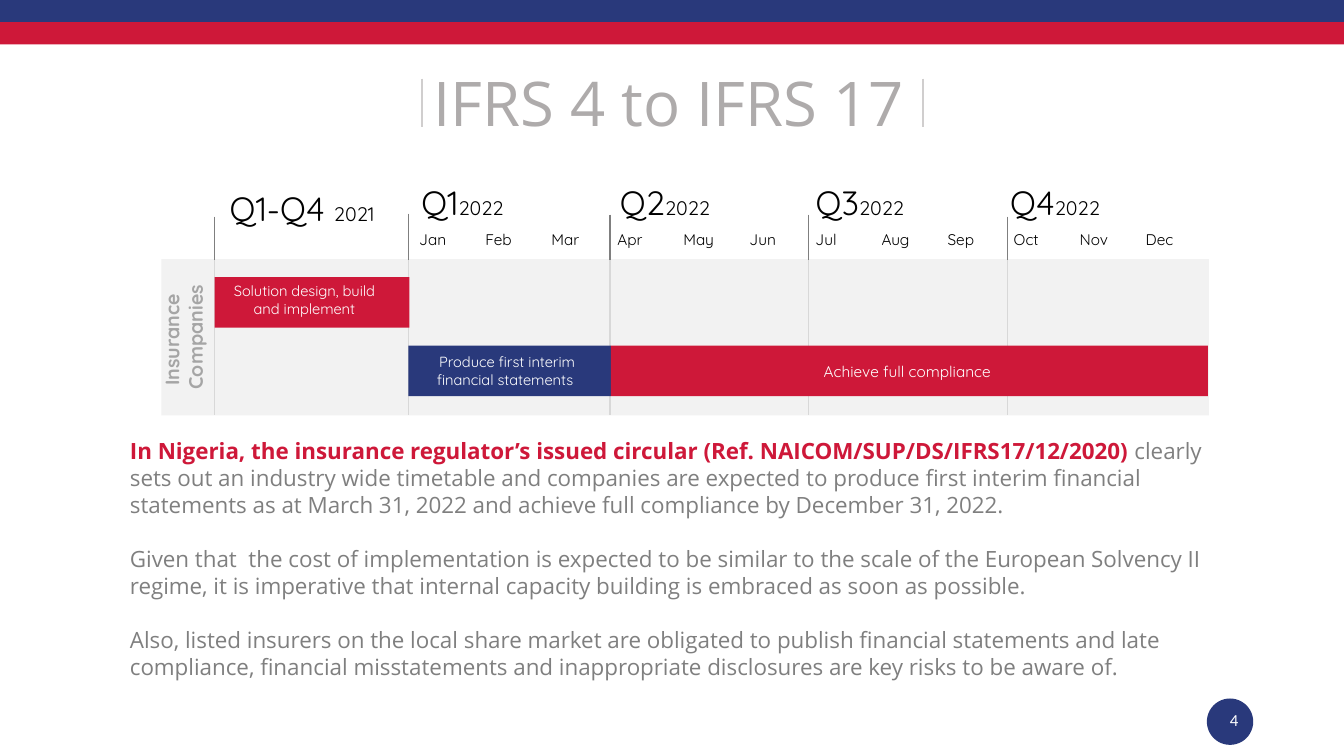
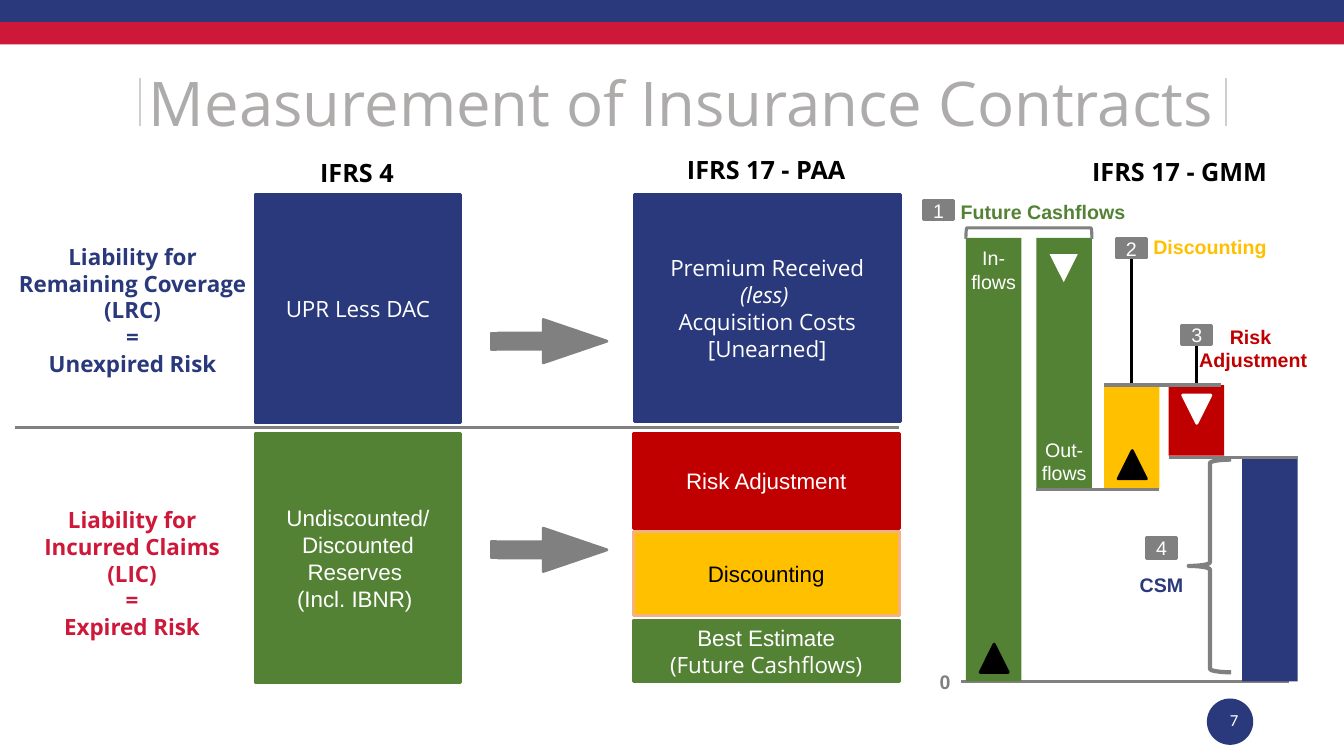
from dataclasses import dataclass, field
from typing import Optional

from lxml import etree
from pptx import Presentation
from pptx.dml.color import RGBColor
from pptx.enum.shapes import MSO_CONNECTOR, MSO_SHAPE as Geo
from pptx.enum.text import MSO_ANCHOR as Anchor, MSO_AUTO_SIZE as Fit, PP_ALIGN as Al
from pptx.oxml.ns import qn
from pptx.util import Inches, Pt


@dataclass(frozen=True)
class Theme:
    navy: str = "29397B"
    red: str = "CE1839"
    green: str = "548235"
    amber: str = "FFC000"
    peach: str = "F4B183"
    crimson: str = "C00000"
    gray: str = "808080"
    body: str = "7F7F7F"
    title: str = "AEABAB"
    rule: str = "D0CECE"
    grid: str = "D8D8D8"
    panel: str = "F2F2F2"
    side: str = "A5A5A5"
    black: str = "000000"
    white: str = "FFFFFF"
    sans: str = "Open Sans"
    round: str = "Quicksand"
    plain: str = "Arial"
    number: str = "Calibri"
    title_size: float = 44
    quarter_size: float = 24
    head_size: float = 18
    text_size: float = 16
    label_size: float = 14
    number_size: float = 12
    month_size: float = 11
    bar_size: float = 10.5


T = Theme()
INSET = (0.1, 0.05, 0.1, 0.05)
TIGHT = (0.04, 0.08, 0.04, 0.04)
NONE = (0, 0, 0, 0)


@dataclass(frozen=True)
class Text:
    paras: tuple
    font: str = T.sans
    size: float = T.text_size
    color: str = T.black
    bold: bool = False
    align: Al = Al.CENTER
    anchor: Anchor = Anchor.TOP
    inset: tuple = INSET
    wrap: bool = True
    gap: float = 0


@dataclass(frozen=True)
class Block:
    at: tuple
    fill: Optional[str] = None
    line: Optional[str] = None
    geo: Geo = Geo.RECTANGLE
    text: Optional[Text] = None
    width: float = 2
    rot: float = 0
    adj: tuple = ()


@dataclass(frozen=True)
class Rule:
    start: tuple
    end: tuple
    color: str = T.gray
    width: float = 2.25


@dataclass(frozen=True)
class Period:
    name: str
    year: str
    line_x: float
    text_x: float
    text_y: float = 1.76
    tick_y: float = 2.13
    months: tuple = field(default=())


def color(hex_code: str) -> RGBColor:
    return RGBColor.from_string(hex_code)


def write(tf, text: Text) -> None:
    sides = ("margin_left", "margin_top", "margin_right", "margin_bottom")
    frame = dict(zip(sides, map(Inches, text.inset)))
    frame |= {"word_wrap": text.wrap, "vertical_anchor": text.anchor}
    for name, value in frame.items():
        setattr(tf, name, value)
    for i, para in enumerate(text.paras):
        p = tf.add_paragraph() if i else tf.paragraphs[0]
        p.alignment = text.align
        if i and text.gap:
            p.space_before = Pt(text.gap)
        runs = ((para, {}),) if isinstance(para, str) else para
        for words, changes in runs:
            r = p.add_run()
            r.text = words
            fmt = {"name": text.font, "size": text.size, "bold": text.bold,
                   "color": text.color} | changes
            r.font.color.rgb = color(fmt.pop("color"))
            fmt["size"] = Pt(fmt["size"])
            for name, value in fmt.items():
                setattr(r.font, name, value)


def add_text(s, at: tuple, text: Text, rot: float = 0, grow: bool = True) -> None:
    sp = s.shapes.add_textbox(*map(Inches, at))
    sp.rotation = rot
    write(sp.text_frame, text)
    if grow:
        sp.text_frame.auto_size = Fit.SHAPE_TO_FIT_TEXT


def add_block(s, b: Block) -> None:
    sp = s.shapes.add_shape(b.geo, *map(Inches, b.at))
    sp.shadow.inherit = False
    sp.rotation = b.rot
    for i, value in enumerate(b.adj):
        sp.adjustments[i] = value
    for part, hex_code in ((sp.fill, b.fill), (sp.line.fill, b.line)):
        if hex_code:
            part.solid()
            part.fore_color.rgb = color(hex_code)
        else:
            part.background()
    if b.line:
        sp.line.width = Pt(b.width)
    if b.text:
        write(sp.text_frame, b.text)


def add_rule(s, rule: Rule) -> None:
    ends = map(Inches, rule.start + rule.end)
    ln = s.shapes.add_connector(MSO_CONNECTOR.STRAIGHT, *ends)
    ln.line.color.rgb = color(rule.color)
    ln.line.width = Pt(rule.width)
    etree.SubElement(ln._element.spPr, qn("a:effectLst"))


def add_frame(prs, title: str, at: tuple, rule_xs: tuple, rule_y: float, number: str):
    s = prs.slides.add_slide(prs.slide_layouts[6])
    add_block(s, Block((11.97, 6.93, 0.46, 0.46), T.navy, geo=Geo.OVAL))
    for i, fill in enumerate((T.navy, T.red)):
        add_block(s, Block((0, 0.22 * i, 13.33, 0.22), fill))
    add_text(s, at, Text((title,), size=T.title_size, color=T.title))
    for x in rule_xs:
        add_rule(s, Rule((x, rule_y), (x, rule_y + 0.48), T.rule, 1.5))
    add_text(s, (11.92, 6.94, 0.46, 0.4),
             Text((number,), T.number, T.number_size, T.white,
                  align=Al.RIGHT, anchor=Anchor.MIDDLE), grow=False)
    return s


PERIODS = (
    Period("Q1-Q4 ", "2021", 2.13, 2.18, 1.82, 2.15),
    Period("Q1", "2022", 4.05, 4.08, tick_y=2.12, months=("Jan", "Feb", "Mar")),
    Period("Q2", "2022", 6.05, 6.05, months=("Apr", "May", "Jun")),
    Period("Q3", "2022", 8.02, 7.99, months=("Jul", "Aug", "Sep")),
    Period("Q4", "2022", 9.99, 9.92, tick_y=2.15, months=("Oct", "Nov", "Dec")),
)


def add_timeline(s) -> None:
    add_block(s, Block((1.6, 2.57, 10.39, 1.55), T.panel))
    for q in PERIODS:
        add_rule(s, Rule((q.line_x, 2.57), (q.line_x, 4.12), T.grid, 0.75))
        add_rule(s, Rule((q.line_x, q.tick_y), (q.line_x, 2.58), T.body, 0.75))
        label = ((q.name, {}), (q.year, {"size": T.label_size}))
        add_text(s, (q.text_x, q.text_y, 1.91, 0.5),
                 Text((label,), T.round, T.quarter_size, align=Al.LEFT))
    months = [month for q in PERIODS for month in q.months]
    for i, month in enumerate(months):
        add_text(s, (4.06 + 0.655 * i, 2.23, 0.64, 0.29),
                 Text((month,), T.round, T.month_size, align=Al.LEFT))
    add_text(s, (1.05, 3.06, 1.54, 0.57),
             Text(("Insurance ", "Companies"), T.round, T.label_size, T.side, True), 270)
    bars = (
        ((2.13, 2.75, 1.93, 0.5), T.red, "Solution design, build and implement",
         T.bar_size, Anchor.TOP, (0.11, 0.05, 0.26, 0.05)),
        ((4.05, 3.43, 2.01, 0.5), T.navy, "Produce first interim financial statements ",
         T.bar_size, Anchor.MIDDLE, (0.2, 0.05, 0.25, 0.05)),
        ((6.06, 3.43, 5.92, 0.5), T.red, "Achieve full compliance ",
         T.month_size, Anchor.MIDDLE, INSET),
    )
    for at, fill, words, size, anchor, inset in bars:
        add_block(s, Block(at, fill, text=Text(
            (words,), T.round, size, T.white, anchor=anchor, inset=inset)))


def timetable_slide(prs) -> None:
    s = add_frame(prs, "IFRS 4 to IFRS 17", (2.14, 0.6, 8.99, 0.84), (4.19, 9.15), 0.78, "4")
    add_timeline(s)
    circular = (
        ("In Nigeria, the insurance regulator’s issued circular "
         "(Ref. NAICOM/SUP/DS/IFRS17/12/2020) ", {"color": T.red, "bold": True}),
        ("clearly sets out an industry wide timetable and companies are expected to "
         "produce first interim financial statements as at March 31, 2022 and achieve "
         "full compliance by December 31, 2022.", {}),
    )
    cost = ("Given that  the cost of implementation is expected to be similar to the scale "
            "of the European Solvency II regime, it is imperative that internal capacity "
            "building is embraced as soon as possible.")
    listed = ("Also, listed insurers on the local share market are obligated to publish "
              "financial statements and late compliance, financial misstatements and "
              "inappropriate disclosures are key risks to be aware of.")
    add_text(s, (1.19, 4.29, 11.2, 2.52),
             Text((circular, cost, listed), color=T.body, align=Al.LEFT, gap=19.3))


def add_comparison(s) -> None:
    add_rule(s, Rule((0.15, 4.24), (8.92, 4.24)))
    for x, y, words in ((2.52, 1.51, "IFRS 4"), (6.58, 1.48, "IFRS 17 - PAA"),
                        (10.68, 1.5, "IFRS 17 - GMM")):
        add_text(s, (x, y, 2.04, 0.4), Text((words,), size=T.head_size, bold=True))
    liabilities = (
        ((0.06, 2.36, 2.51, 1.45), T.navy,
         ("Liability for Remaining Coverage", "(LRC)", "=", "Unexpired Risk")),
        ((0.2, 4.97, 2.22, 1.45), T.red,
         ("Liability for Incurred Claims", "(LIC)", "=", "Expired Risk")),
    )
    for at, hue, paras in liabilities:
        add_text(s, at, Text(paras, color=hue, bold=True))
    boxes = (
        ((2.53, 1.93, 2.04, 2.26), T.navy, T.navy, T.sans, T.white, ("UPR Less DAC",)),
        ((2.53, 4.3, 2.04, 2.47), T.green, T.green, T.plain, T.white,
         ("Undiscounted/ Discounted Reserves ", "(Incl. IBNR) ")),
        ((6.29, 1.93, 2.64, 2.25), T.navy, T.navy, T.sans, T.white,
         ("Premium Received", (("(less) ", {"italic": True}),),
          "Acquisition Costs", "[Unearned]")),
        ((6.28, 6.15, 2.64, 0.61), T.green, T.green, T.plain, T.white,
         ("Best Estimate", (("(Future Cashflows)", {"name": T.sans}),))),
        ((6.28, 5.27, 2.64, 0.84), T.amber, T.peach, T.plain, T.black, ("Discounting",)),
        ((6.28, 4.3, 2.64, 0.94), T.crimson, T.crimson, T.plain, T.white,
         ("Risk Adjustment",)),
    )
    for at, fill, line, font, hue, paras in boxes:
        add_block(s, Block(at, fill, line, text=Text(
            paras, font, color=hue, anchor=Anchor.MIDDLE)))
    for y in (3.17, 5.24):
        add_block(s, Block((4.87, y, 1.15, 0.43), T.gray, T.gray,
                           Geo.STRIPED_RIGHT_ARROW, adj=(0.375, 1.469)))


def add_waterfall(s) -> None:
    add_rule(s, Rule((9.53, 6.76), (12.78, 6.76)))
    bars = (
        (9.58, 2.36, 4.4, T.green, "In-flows", Anchor.TOP),
        (10.28, 2.36, 2.49, T.green, "Out-flows", Anchor.BOTTOM),
        (10.95, 3.82, 1.03, T.amber, "", Anchor.TOP),
        (11.59, 3.82, 0.7, T.crimson, "", Anchor.TOP),
        (12.32, 4.54, 2.22, T.navy, "", Anchor.TOP),
    )
    for x, y, h, fill, words, anchor in bars:
        text = Text((words,), T.plain, T.label_size, T.white, anchor=anchor, inset=TIGHT)
        add_block(s, Block((x, y, 0.55, h), fill, text=text if words else None))
    triangles = (
        (9.72, 6.39, T.black, T.black, 0), (10.41, 2.52, T.white, None, 180),
        (11.09, 4.47, T.black, T.black, 0), (11.73, 3.92, T.white, T.white, 180),
    )
    for x, y, fill, line, rot in triangles:
        add_block(s, Block((x, y, 0.28, 0.28), fill, line, Geo.ISOSCELES_TRIANGLE, rot=rot))
    add_block(s, Block((10.15, 1.69, 0.11, 1.25), line=T.gray, geo=Geo.RIGHT_BRACKET,
                       width=2.25, rot=270))
    add_block(s, Block((11.79, 4.56, 0.42, 2.11), line=T.gray, geo=Geo.LEFT_BRACE, width=3))
    for x, top in ((11.22, 2.57), (11.87, 3.43)):
        add_rule(s, Rule((x, 3.82), (x, top), T.black))
    for x1, x2, y in ((10.28, 11.5, 4.86), (10.95, 12.11, 3.82), (11.59, 12.87, 4.54)):
        add_rule(s, Rule((x1, y), (x2, y)))
    badges = ((9.16, 1.99, 0.19), (11.07, 2.37, 0.19), (11.72, 3.23, 0.19), (11.37, 5.33, 0.21))
    for i, (x, y, h) in enumerate(badges, 1):
        add_block(s, Block((x, y, 0.3, h), T.gray, T.gray, text=Text(
            (str(i),), T.plain, T.label_size, T.white, anchor=Anchor.MIDDLE, inset=NONE)))
    labels = (
        ((9.22, 6.6, 0.31, 0.34), T.gray, Al.LEFT, ("0",)),
        ((9.43, 1.93, 1.84, 0.34), T.green, Al.LEFT, ("Future Cashflows",)),
        ((11.34, 2.28, 1.33, 0.34), T.amber, Al.LEFT, ("Discounting",)),
        ((11.79, 3.17, 1.28, 0.57), T.crimson, Al.CENTER, ("Risk ", "Adjustment")),
        ((11.2, 5.63, 0.64, 0.37), T.navy, Al.CENTER, ("CSM",)),
    )
    for at, hue, align, paras in labels:
        add_text(s, at, Text(paras, T.plain, T.label_size, hue, True, align, wrap=False))


def measurement_slide(prs) -> None:
    s = add_frame(prs, "Measurement of Insurance Contracts", (0.43, 0.6, 12.66, 0.84),
                  (1.39, 12.16), 0.77, "7")
    add_comparison(s)
    add_waterfall(s)


def main() -> None:
    prs = Presentation()
    prs.slide_width, prs.slide_height = Inches(13.33), Inches(7.5)
    timetable_slide(prs)
    measurement_slide(prs)
    prs.save("out.pptx")


if __name__ == "__main__":
    main()
